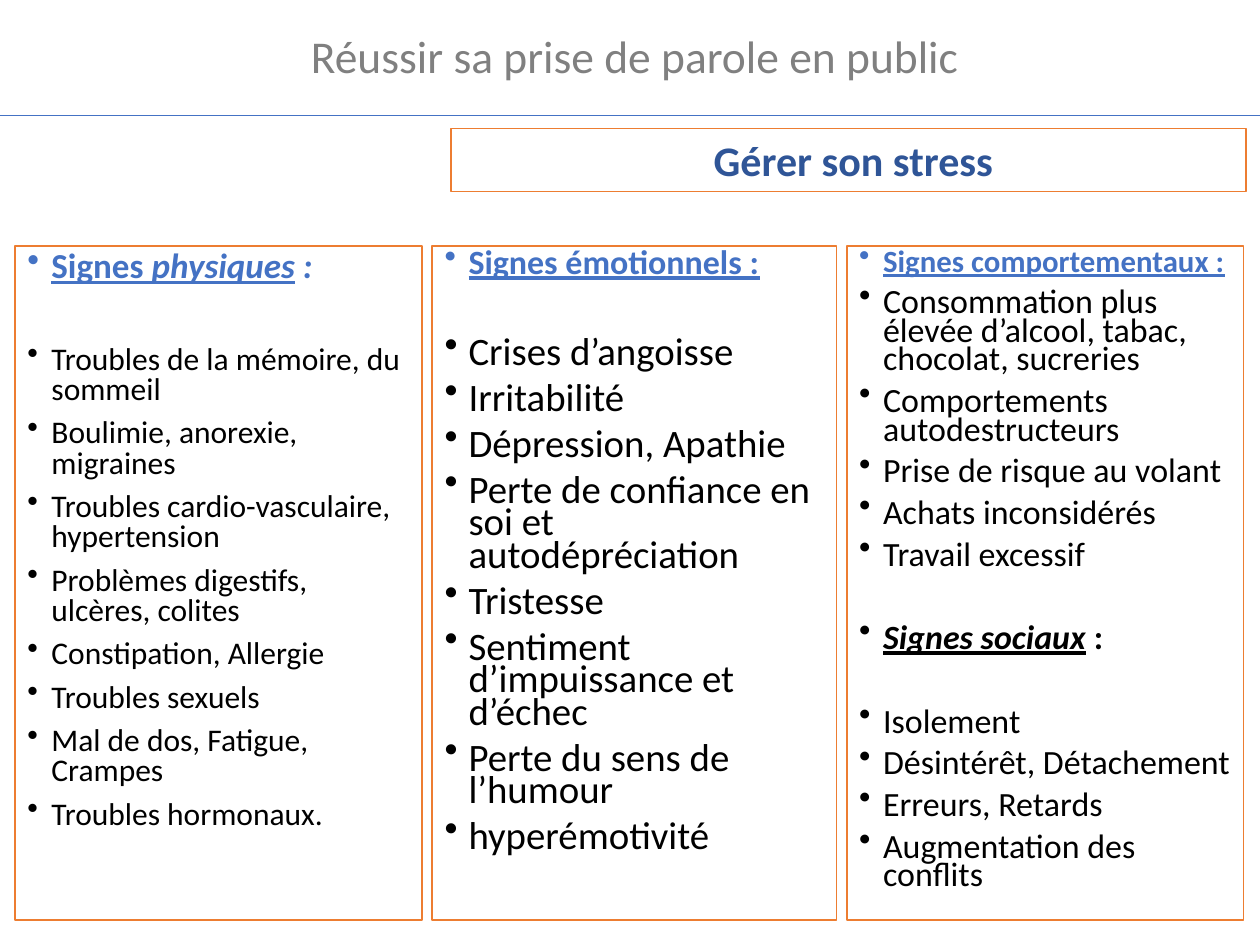
from lxml import etree
from pptx import Presentation
from pptx.dml.color import RGBColor
from pptx.enum.shapes import MSO_CONNECTOR, MSO_SHAPE
from pptx.enum.text import MSO_ANCHOR, PP_ALIGN
from pptx.oxml.ns import qn
from pptx.util import Inches, Pt

RECT, STRAIGHT = MSO_SHAPE.RECTANGLE, MSO_CONNECTOR.STRAIGHT
TOP, LEFT, CENTER = MSO_ANCHOR.TOP, PP_ALIGN.LEFT, PP_ALIGN.CENTER
WHITE = RGBColor(0xFF, 0xFF, 0xFF)
BLACK = RGBColor(0, 0, 0)
GREY = RGBColor(0x80, 0x80, 0x80)
BLUE = RGBColor(0x44, 0x72, 0xC4)
NAVY = RGBColor(0x2F, 0x55, 0x97)
ORANGE = RGBColor(0xED, 0x7D, 0x31)
FONT = "Calibri"
WIDTH, HEIGHT = 10, 7.5
MARGIN, GAP, COLUMN_TOP, COLUMN_HEIGHT = 0.12, 0.08, 1.95, 5.35
INDENT, SPACE = 0.19, 7.5

PHYSICAL = [
    "Troubles de la mémoire, du sommeil",
    "Boulimie, anorexie, migraines",
    "Troubles cardio-vasculaire, hypertension",
    "Problèmes digestifs, ulcères, colites",
    "Constipation, Allergie",
    "Troubles sexuels",
    "Mal de dos, Fatigue, Crampes",
    "Troubles hormonaux.",
]
EMOTIONAL = [
    "Crises d’angoisse",
    "Irritabilité",
    "Dépression, Apathie",
    "Perte de confiance en soi et autodépréciation",
    "Tristesse",
    "Sentiment d’impuissance et d’échec",
    "Perte du sens de l’humour",
    "hyperémotivité",
]
BEHAVIOURAL = [
    "Consommation plus élevée d’alcool, tabac, chocolat, sucreries",
    "Comportements autodestructeurs",
    "Prise de risque au volant",
    "Achats inconsidérés",
    "Travail excessif",
]
SOCIAL = [
    "Isolement",
    "Désintérêt, Détachement",
    "Erreurs, Retards",
    "Augmentation des conflits",
]


def add_run(p, text, size, color, styles=""):
    """Add a run; styles holds any of the letters b, i and u."""
    r = p.add_run()
    r.text = text
    f = r.font
    f.name, f.size, f.color.rgb = FONT, Pt(size), color
    f.bold, f.italic, f.underline = ("b" in styles, "i" in styles, "u" in styles)


def add_rule(s, y):
    """Draw a thin rule across the slide."""
    line = s.shapes.add_connector(STRAIGHT, 0, Inches(y), Inches(WIDTH), Inches(y))
    line.line.color.rgb, line.line.width = BLUE, Pt(0.5)
    etree.SubElement(line._element.spPr, qn("a:effectLst"))


def add_frame(s, *box):
    """Add a white box with an orange outline and return its text frame."""
    sp = s.shapes.add_shape(RECT, *map(Inches, box))
    sp.shadow.inherit = False
    sp.fill.solid()
    sp.fill.fore_color.rgb = WHITE
    sp.line.color.rgb, sp.line.width = ORANGE, Pt(1)
    tf = sp.text_frame
    tf.word_wrap, tf.vertical_anchor = True, TOP
    return tf


def add_title(s, text):
    """Add the centred slide title."""
    tf = s.shapes.add_textbox(*map(Inches, (0.08, 0.17, 9.92, 0.54))).text_frame
    tf.word_wrap = True
    p = tf.paragraphs[0]
    p.alignment = CENTER
    add_run(p, text, 26, GREY)


def add_banner(s, text):
    """Add the framed topic of the slide."""
    p = add_frame(s, 3.58, 1.02, 6.31, 0.5).paragraphs[0]
    p.alignment = CENTER
    add_run(p, text, 24, NAVY, "b")


def add_bullet(p, runs, size, color, spacing, before):
    """Fill a paragraph as a bullet made of (text, styles) runs."""
    pPr = p._p.get_or_add_pPr()
    pPr.set("marL", str(Inches(INDENT)))
    pPr.set("indent", str(-Inches(INDENT)))
    etree.SubElement(pPr, qn("a:buChar"), char="•")
    p.alignment, p.line_spacing, p.space_before = LEFT, spacing, Pt(before)
    for text, styles in runs:
        add_run(p, text, size, color, styles)


def add_column(s, left, width, spacing, head_size, size, wide_gap, groups):
    """Add a framed list of (heading runs, gap after heading, items) groups."""
    tf = add_frame(s, left, COLUMN_TOP, width, COLUMN_HEIGHT)
    for n, (heading, spaced, items) in enumerate(groups):
        p = tf.add_paragraph() if n else tf.paragraphs[0]
        look = (size, BLACK) if n else (head_size, BLUE)
        add_bullet(p, heading, *look, spacing, wide_gap if n else 0)
        for k, item in enumerate(items):
            before = wide_gap if spaced and k == 0 else SPACE
            add_bullet(tf.add_paragraph(), [(item, "")], size, BLACK, spacing, before)


def main():
    """Build the slide and save it."""
    prs = Presentation()
    prs.slide_width, prs.slide_height = Inches(WIDTH), Inches(HEIGHT)
    s = prs.slides.add_slide(prs.slide_layouts[6])
    add_rule(s, 0.92)
    add_banner(s, " Gérer son stress")
    add_title(s, "Réussir sa prise de parole en public")

    physical = [("Signes ", "bu"), ("physiques", "biu"), (" :", "bi")]
    emotional = [("Signes émotionnels :", "bu")]
    behavioural = [("Signes comportementaux :", "bu")]
    social = [("Signes sociaux", "biu"), (" :", "b")]
    columns = [
        (3.23, 0.8, 20, 18, 34.5, [(physical, True, PHYSICAL)]),
        (3.21, 0.7, 19.4, 22.2, 34, [(emotional, True, EMOTIONAL)]),
        (3.15, 0.7, 17.6, 19.4, 31.5,
         [(behavioural, False, BEHAVIOURAL), (social, True, SOCIAL)]),
    ]
    left = MARGIN
    for width, *details in columns:
        add_column(s, left, width, *details)
        left += width + GAP
    prs.save("out.pptx")


if __name__ == "__main__":
    main()
